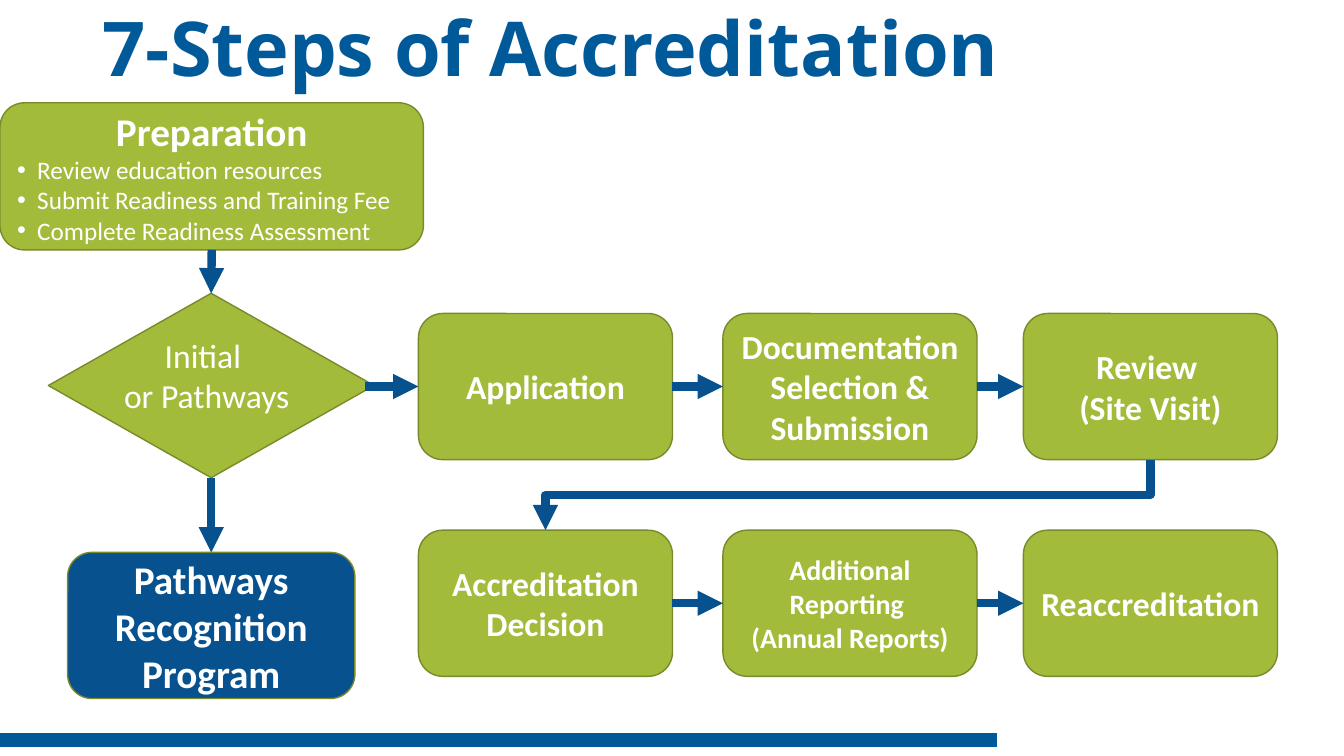
import pptx
import pptx.util
import pptx.dml.color
import pptx.enum.shapes
import pptx.enum.text
import pptx.oxml.ns
from lxml import etree
from dataclasses import dataclass

Inches, Pt = pptx.util.Inches, pptx.util.Pt
SHAPE = pptx.enum.shapes.MSO_SHAPE
CONNECTOR = pptx.enum.shapes.MSO_CONNECTOR
ALIGN = pptx.enum.text.PP_ALIGN
ANCHOR = pptx.enum.text.MSO_ANCHOR
qn = pptx.oxml.ns.qn
TOP, LEFT, BOTTOM, RIGHT = range(4)


@dataclass(frozen=True)
class Theme:
    title_blue: str = "005998"
    navy: str = "06518E"
    green: str = "A2BB3A"
    olive: str = "788A2B"
    white: str = "FFFFFF"
    title_font: str = "Open Sans"
    body_font: str = "Calibri"
    title: int = 54
    heading: int = 28
    step: int = 24
    small_step: int = 20
    bullet: int = 18


theme = Theme()

# Content
TITLE = "7-Steps of Accreditation"
PREPARATION = ["Preparation", "Review education resources",
               "Submit Readiness and Training Fee", "Complete Readiness Assessment"]
CHOICE = ["Initial ", "or Pathways"]
PATHWAYS = ["Pathways Recognition Program"]
STEPS = [
    [(["Application"], theme.step),
     (["Documentation Selection & Submission"], theme.step),
     (["Review ", "(Site Visit)"], theme.step)],
    [(["Accreditation Decision"], theme.step),
     (["Additional Reporting ", "(Annual Reports)"], theme.small_step),
     (["Reaccreditation"], theme.step)],
]

# Layout
COLUMNS = [4.15, 7.17, 10.15]
ROWS = [3.11, 5.26]
STEP_WIDTH, STEP_HEIGHT = 2.52, 1.45

deck = pptx.Presentation()
deck.slide_width, deck.slide_height = Inches(13.33), Inches(7.5)
page = deck.slides.add_slide(deck.slide_layouts[6])


def rgb(value):
    return pptx.dml.color.RGBColor.from_string(value)


def write(box, lines, size, bold=True, color=theme.white, font=theme.body_font,
          align=ALIGN.CENTER, anchor=ANCHOR.MIDDLE):
    frame = box.text_frame
    frame.text = "\n".join(lines)
    frame.word_wrap = True
    frame.vertical_anchor = anchor
    for para in frame.paragraphs:
        para.alignment = align
        for span in para.runs:
            span.font.size, span.font.bold = Pt(size), bold
            span.font.name, span.font.color.rgb = font, rgb(color)


def add_box(at, kind=SHAPE.ROUNDED_RECTANGLE, fill=theme.green):
    box = page.shapes.add_shape(kind, *map(Inches, at))
    box.shadow.inherit = False
    box.fill.solid()
    box.fill.fore_color.rgb = rgb(fill)
    box.line.color.rgb, box.line.width = rgb(theme.olive), Pt(1)
    return box


def add_line(start, end, kind=CONNECTOR.STRAIGHT, color=theme.navy, width=6, arrow=True):
    line = page.shapes.add_connector(kind, *map(Inches, start + end))
    line.line.color.rgb, line.line.width = rgb(color), Pt(width)
    if arrow:
        etree.SubElement(line.line._get_or_add_ln(), qn("a:tailEnd"), type="triangle")
    etree.SubElement(line._element.spPr, qn("a:effectLst"))
    return line


def join(source, source_side, target, target_side):
    line = add_line((0, 0), (1, 1))
    line.begin_connect(source, source_side)
    line.end_connect(target, target_side)


def add_bullet(para):
    properties = para._p.get_or_add_pPr()
    properties.set("marL", str(Inches(0.2)))
    properties.set("indent", str(Inches(-0.2)))
    etree.SubElement(properties, qn("a:buFont"), typeface="Arial")
    etree.SubElement(properties, qn("a:buChar"), char="•")


# Footer rule and title
add_line((0, 7.34), (9.89, 7.34), color=theme.title_blue, width=10, arrow=False)
title = page.shapes.add_textbox(*map(Inches, (0.92, 0, 11.5, 1.04)))
write(title, [TITLE], theme.title, color=theme.title_blue, font=theme.title_font,
      align=ALIGN.LEFT)
title.text_frame.paragraphs[0].line_spacing = 0.9

# Preparation with its bullets
preparation = add_box((0, 1.02, 4.2, 1.46))
write(preparation, PREPARATION, theme.heading)
for para in preparation.text_frame.paragraphs[1:]:
    add_bullet(para)
    para.alignment = ALIGN.LEFT
    for span in para.runs:
        span.font.size, span.font.bold = Pt(theme.bullet), False

# Grid of steps
grid = []
for top, row in zip(ROWS, STEPS):
    grid.append([])
    for left, (lines, size) in zip(COLUMNS, row):
        step = add_box((left, top, STEP_WIDTH, STEP_HEIGHT))
        write(step, lines, size)
        grid[-1].append(step)

# Choice and pathways branch
choice = add_box((0.48, 2.91, 3.23, 1.83), SHAPE.FLOWCHART_DECISION)
choice_label = page.shapes.add_textbox(*map(Inches, (0.61, 3.27, 2.88, 1.31)))
write(choice_label, CHOICE, theme.step, bold=False, anchor=ANCHOR.TOP)
pathways = add_box((0.67, 5.48, 2.85, STEP_HEIGHT), fill=theme.navy)
write(pathways, PATHWAYS, theme.heading)

# Arrows
join(preparation, BOTTOM, choice, TOP)
join(choice, BOTTOM, pathways, TOP)
middle = ROWS[0] + STEP_HEIGHT / 2
add_line((3.62, middle), (COLUMNS[0], middle)).end_connect(grid[0][0], LEFT)
for row in grid:
    for source, target in zip(row, row[1:]):
        join(source, RIGHT, target, LEFT)

# Elbow from the end of the first row to the start of the second, turned a quarter
drop = ROWS[1] - ROWS[0] - STEP_HEIGHT
span_width = COLUMNS[2] - COLUMNS[0]
center_x = (COLUMNS[0] + COLUMNS[2] + STEP_WIDTH) / 2
center_y = ROWS[1] - drop / 2
elbow = add_line((center_x - drop / 2, center_y - span_width / 2),
                 (center_x + drop / 2, center_y + span_width / 2), CONNECTOR.ELBOW)
elbow._element.spPr.find(qn("a:xfrm")).set("rot", str(90 * 60000))

deck.save("out.pptx")
